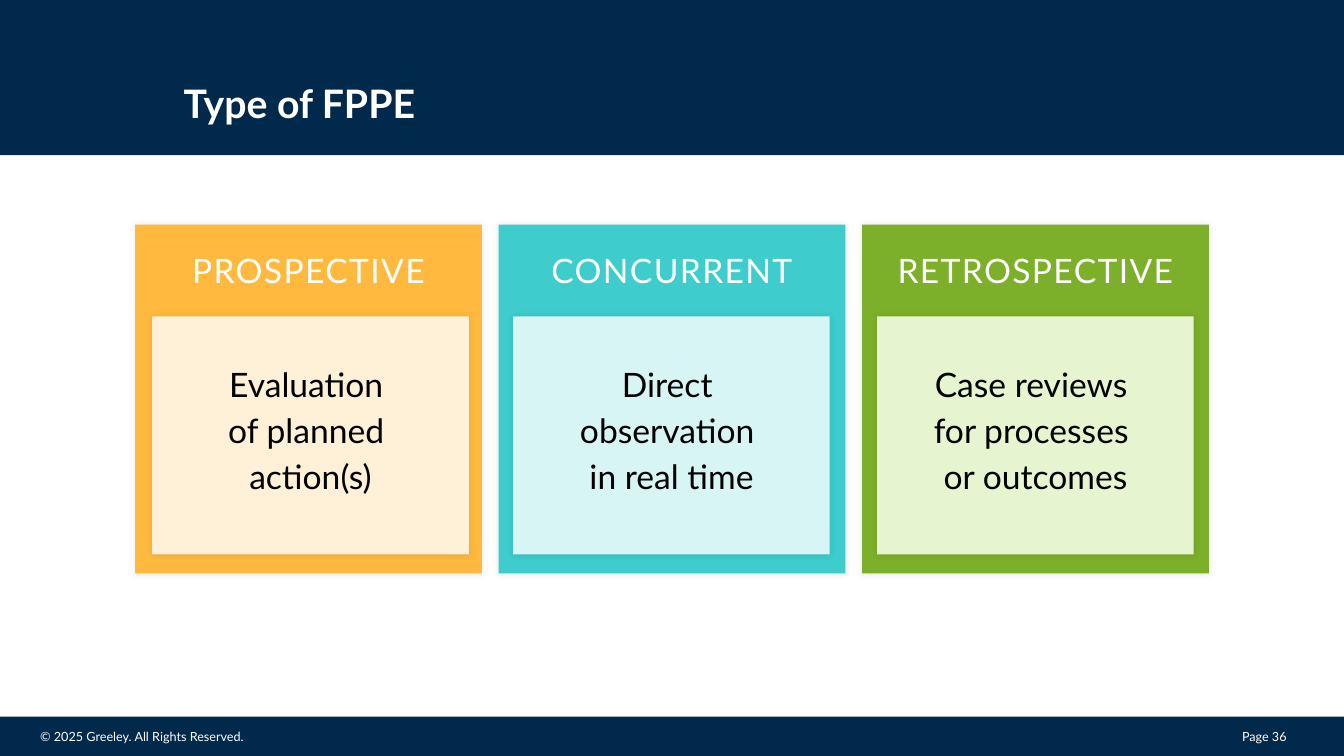
from lxml import etree
from pptx import Presentation
from pptx.dml.color import RGBColor
from pptx.enum.shapes import MSO_SHAPE
from pptx.enum.text import MSO_ANCHOR, PP_ALIGN
from pptx.oxml.ns import qn
from pptx.util import Inches, Pt

RECTANGLE = MSO_SHAPE.RECTANGLE
TOP, MIDDLE, BOTTOM = MSO_ANCHOR.TOP, MSO_ANCHOR.MIDDLE, MSO_ANCHOR.BOTTOM
LEFT, CENTER = PP_ALIGN.LEFT, PP_ALIGN.CENTER

FONT = "Lato"
COLORS = {
    "navy": "00294C", "white": "FFFFFF", "black": "000000",
    "orange": "FFB93E", "cream": "FFF1D8",
    "teal": "3ECCCC", "pale teal": "D8F5F5",
    "green": "7CAF2A", "pale green": "E6F4D0",
}
SLIDE_WIDTH, SLIDE_HEIGHT = 13.33, 7.5
CARD_LEFT, CARD_PITCH, CARD_WIDTH = 1.34, 3.605, 3.44
PANEL_WIDTH = 3.14

# heading, description, card colour, panel colour, panel left
CARDS = [
    ("PROSPECTIVE", "Evaluation \vof planned \vaction(s)", "orange", "cream", 1.51),
    ("CONCURRENT", "Direct \vobservation \vin real time", "teal", "pale teal", 5.09),
    ("RETROSPECTIVE", "Case reviews \vfor processes \vor outcomes", "green", "pale green", 8.7),
]


def color(name):
    return RGBColor.from_string(COLORS[name])


def add_glow_shadow(shape):
    """Put a faint, centred black shadow around the shape."""
    effects = shape._element.spPr.find(qn("a:effectLst"))
    shadow = etree.SubElement(effects, qn("a:outerShdw"), blurRad=str(Pt(5)),
                              dist="0", dir="0", algn="ctr", rotWithShape="0")
    black = etree.SubElement(shadow, qn("a:srgbClr"), val=COLORS["black"])
    etree.SubElement(black, qn("a:alpha"), val="10000")


def add_rectangle(page, left, top, width, height, fill):
    shape = page.shapes.add_shape(RECTANGLE, Inches(left), Inches(top),
                                  Inches(width), Inches(height))
    shape.fill.solid()
    shape.fill.fore_color.rgb = color(fill)
    shape.line.fill.background()
    shape.shadow.inherit = False
    return shape


def add_text(page, left, top, width, height, text, size, ink="white", bold=False,
             align=LEFT, anchor=MIDDLE, inset=(0, 0), line_spacing=None, tracking=None):
    """Add a one-paragraph text box; inset is (horizontal, vertical) in inches."""
    box = page.shapes.add_textbox(Inches(left), Inches(top),
                                  Inches(width), Inches(height))
    frame = box.text_frame
    frame.word_wrap = True
    frame.vertical_anchor = anchor
    frame.margin_left = frame.margin_right = Inches(inset[0])
    frame.margin_top = frame.margin_bottom = Inches(inset[1])
    para = frame.paragraphs[0]
    para.text = text
    para.alignment = align
    para.line_spacing = line_spacing
    para.font.name = FONT
    para.font.size = Pt(size)
    para.font.bold = bold
    para.font.color.rgb = color(ink)
    if tracking:
        for span in para.runs:
            span.font._element.set("spc", str(tracking * 100))


def add_header(page):
    add_rectangle(page, 0, 0, SLIDE_WIDTH, 1.54, "navy")
    add_text(page, 1.82, 0, 11.21, 1.25, "Type of FPPE", 28, bold=True,
             anchor=BOTTOM, line_spacing=1.08)


def add_footer(page):
    add_rectangle(page, 0, 7.11, SLIDE_WIDTH, SLIDE_HEIGHT - 7.11, "navy")
    for left, width, text in [(0.3, 4.48, "© 2025 Greeley. All Rights Reserved."),
                              (12.22, 1.05, "Page 36")]:
        add_text(page, left, 7.18, width, 0.26, text, 9, anchor=TOP, inset=(0.1, 0.05))


def add_card(page, left, heading, description, card_fill, panel_fill, panel_left):
    card = add_rectangle(page, left, 2.23, CARD_WIDTH, 3.46, card_fill)
    panel = add_rectangle(page, panel_left, 3.14, PANEL_WIDTH, 2.36, panel_fill)
    for shape in (card, panel):
        add_glow_shadow(shape)
    add_text(page, left, 2.29, CARD_WIDTH, 0.77, heading, 24, align=CENTER, tracking=1)
    add_text(page, panel_left, 3.5, PANEL_WIDTH, 1.48, description, 24, ink="black",
             align=CENTER, line_spacing=1.13)


def main():
    deck = Presentation()
    deck.slide_width = Inches(SLIDE_WIDTH)
    deck.slide_height = Inches(SLIDE_HEIGHT)
    page = deck.slides.add_slide(deck.slide_layouts[6])
    add_footer(page)
    add_header(page)
    for index, card in enumerate(CARDS):
        add_card(page, CARD_LEFT + index * CARD_PITCH, *card)
    deck.save("out.pptx")


if __name__ == "__main__":
    main()
